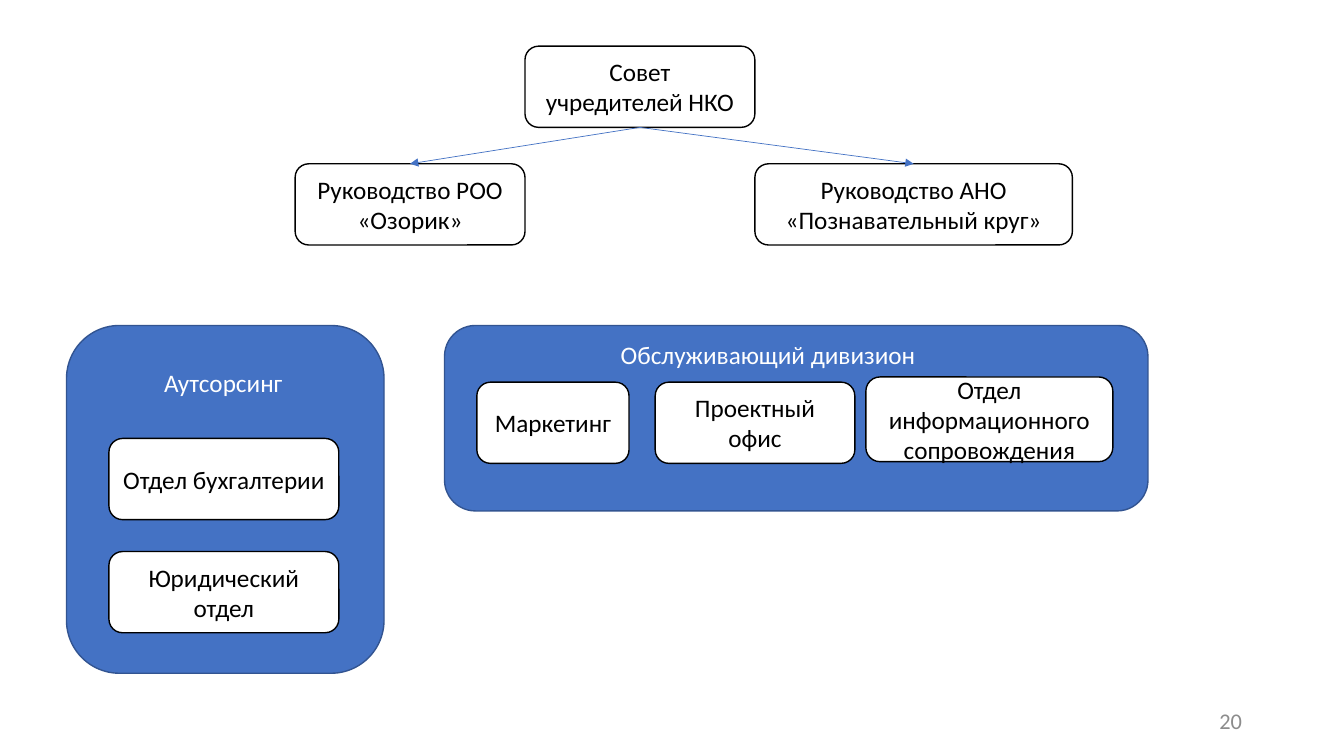
from lxml.etree import SubElement
from pptx import Presentation
from pptx.dml.color import RGBColor
from pptx.enum.shapes import MSO_CONNECTOR, MSO_SHAPE
from pptx.enum.text import MSO_ANCHOR, PP_ALIGN
from pptx.oxml.ns import qn
from pptx.util import Pt

BLUE = RGBColor(0x44, 0x72, 0xC4)
DARK_BLUE = RGBColor(0x32, 0x54, 0x91)
WHITE = RGBColor(0xFF, 0xFF, 0xFF)
BLACK = RGBColor(0x00, 0x00, 0x00)
GRAY = RGBColor(0x8C, 0x8C, 0x8C)

BOX_WIDTH, WIDE_WIDTH, BOX_HEIGHT = 164.2, 226.8, 58
COUNCIL_LEFT, COUNCIL_TOP, MANAGEMENT_TOP = 375, 33, 117
PANEL_TOP, OUTSOURCING_LEFT, DIVISION_LEFT = 232.5, 47.5, 317.5
OUTSOURCING_BOX_LEFT, OUTSOURCING_TOP, OUTSOURCING_STEP = 77.8, 313.2, 80.8
DIVISION_ROW_TOP = 273

COUNCIL = "Совет учредителей НКО"
MANAGEMENT = [
    ("Руководство РОО «Озорик»", COUNCIL_LEFT - BOX_WIDTH, BOX_WIDTH),
    ("Руководство АНО «Познавательный круг»", COUNCIL_LEFT + BOX_WIDTH, WIDE_WIDTH),
]
PANELS = [
    (DIVISION_LEFT, PANEL_TOP, 502.5, 132.5),
    (OUTSOURCING_LEFT, PANEL_TOP, WIDE_WIDTH, 248.4),
]
OUTSOURCING = ["Отдел бухгалтерии", "Юридический отдел"]
DIVISION = [
    ("Маркетинг", 340.6, DIVISION_ROW_TOP, 108.7, BOX_HEIGHT),
    ("Проектный офис", 468, DIVISION_ROW_TOP, 142.6, BOX_HEIGHT),
    ("Отдел информационного сопровождения", 618.5, 269.3, 176.4, 60.5),
]
LABELS = [
    ("Аутсорсинг", (110.2, 258.5, 100, 29), 18, WHITE, PP_ALIGN.LEFT, False),
    ("Обслуживающий дивизион", (436.3, 239, 226.8, 29), 18, WHITE, PP_ALIGN.LEFT, False),
    ("20", (678.2, 500.4, 216, 29), 16, GRAY, PP_ALIGN.RIGHT, True),
]


def write_text(shape, text, size, color, alignment, wrap=True):
    frame = shape.text_frame
    frame.word_wrap = wrap
    frame.vertical_anchor = MSO_ANCHOR.MIDDLE
    paragraph = frame.paragraphs[0]
    paragraph.alignment = alignment
    run = paragraph.add_run()
    run.text = text
    for name, value in {"name": "Calibri", "size": Pt(size)}.items():
        setattr(run.font, name, value)
    run.font.color.rgb = color


def add_panel(slide, bounds, fill, line):
    shape = slide.shapes.add_shape(MSO_SHAPE.ROUNDED_RECTANGLE, *map(Pt, bounds))
    shape.shadow.inherit = False
    shape.fill.solid()
    shape.fill.fore_color.rgb = fill
    shape.line.color.rgb = line
    shape.line.width = Pt(1)
    return shape


def add_box(slide, text, *bounds):
    shape = add_panel(slide, bounds, WHITE, BLACK)
    write_text(shape, text, 18, BLACK, PP_ALIGN.CENTER)
    return shape


def add_arrow(slide, source, target):
    arrow = slide.shapes.add_connector(MSO_CONNECTOR.STRAIGHT, 0, 0, 0, 0)
    arrow.begin_connect(source, 2)
    arrow.end_connect(target, 0)
    arrow.line.color.rgb = BLUE
    arrow.line.width = Pt(0.5)
    properties = arrow._element.spPr
    SubElement(properties.find(qn("a:ln")), qn("a:tailEnd"), type="triangle")
    SubElement(properties, qn("a:effectLst"))


def main():
    presentation = Presentation()
    presentation.slide_width, presentation.slide_height = Pt(960), Pt(540)
    slide = presentation.slides.add_slide(presentation.slide_layouts[6])

    for bounds in PANELS:
        add_panel(slide, bounds, BLUE, DARK_BLUE)

    council = add_box(slide, COUNCIL, COUNCIL_LEFT, COUNCIL_TOP, BOX_WIDTH, BOX_HEIGHT)
    managers = [
        add_box(slide, text, left, MANAGEMENT_TOP, width, BOX_HEIGHT)
        for text, left, width in MANAGEMENT
    ]
    for manager in managers:
        add_arrow(slide, council, manager)

    for index, text in enumerate(OUTSOURCING):
        top = OUTSOURCING_TOP + index * OUTSOURCING_STEP
        add_box(slide, text, OUTSOURCING_BOX_LEFT, top, BOX_WIDTH, BOX_HEIGHT)
    for department in DIVISION:
        add_box(slide, *department)

    for text, bounds, size, color, alignment, wrap in LABELS:
        label = slide.shapes.add_textbox(*map(Pt, bounds))
        write_text(label, text, size, color, alignment, wrap)

    presentation.save("out.pptx")


if __name__ == "__main__":
    main()
